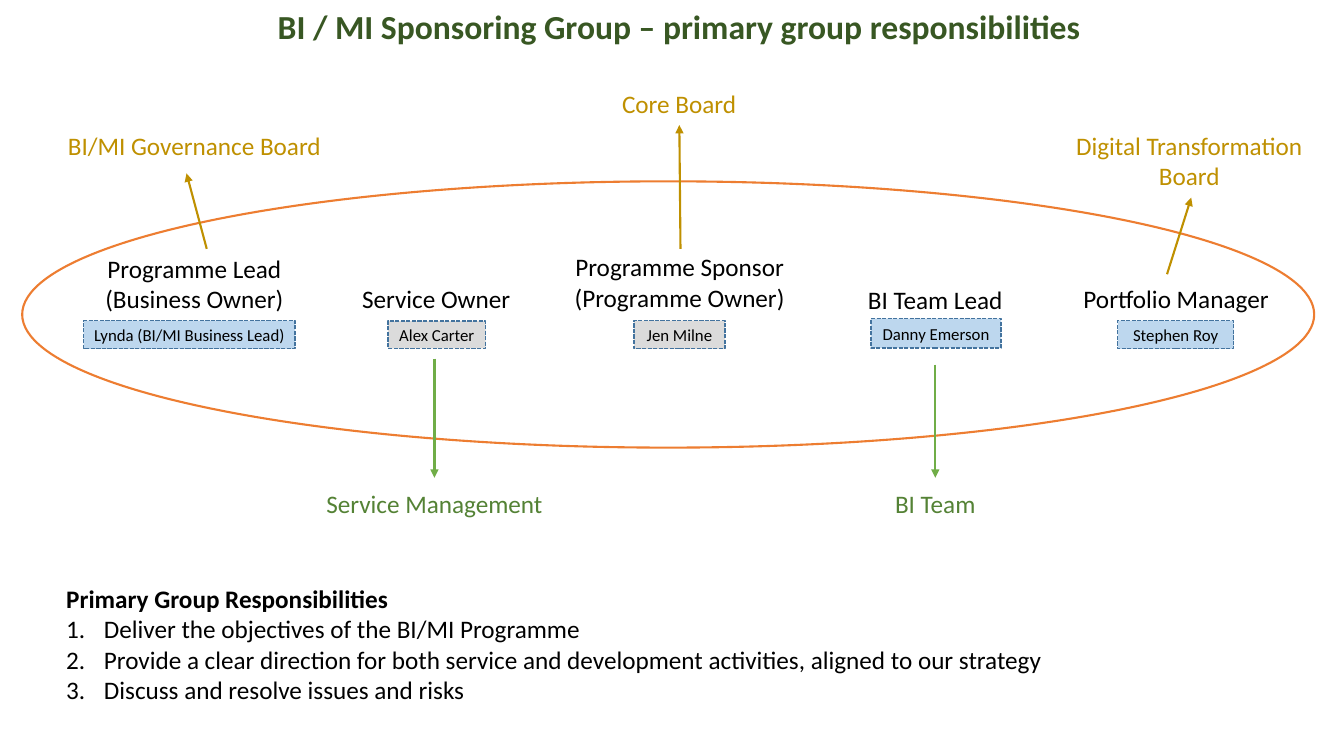
from dataclasses import dataclass

from lxml.etree import SubElement
from pptx import Presentation
from pptx.dml.color import RGBColor
from pptx.enum.dml import MSO_LINE_DASH_STYLE as Dash
from pptx.enum.shapes import MSO_CONNECTOR as Connector, MSO_SHAPE as Shape
from pptx.enum.text import MSO_ANCHOR as Anchor, MSO_AUTO_SIZE as AutoSize, PP_ALIGN as Align
from pptx.oxml.ns import qn
from pptx.slide import Slide
from pptx.text.text import TextFrame, _Paragraph as Paragraph
from pptx.util import Cm, Pt

BLACK = RGBColor(0x00, 0x00, 0x00)
DARK_GREEN = RGBColor(0x38, 0x57, 0x23)
GREEN = RGBColor(0x54, 0x82, 0x35)
LIGHT_GREEN = RGBColor(0x70, 0xAD, 0x47)
GOLD = RGBColor(0xBF, 0x90, 0x00)
ORANGE = RGBColor(0xED, 0x7D, 0x31)
BLUE_LINE = RGBColor(0x43, 0x73, 0x9E)
PALE_BLUE = RGBColor(0xBD, 0xD7, 0xEE)
PALE_GREY = RGBColor(0xDB, 0xDB, 0xDB)

FONT = "Calibri"
LINE_HEIGHT = 0.78
BOX_MARGINS = 0.24


@dataclass(frozen=True)
class Label:
    lines: tuple[str, ...]
    left: float
    top: float
    width: float
    colour: RGBColor = BLACK


@dataclass(frozen=True)
class NameTag:
    name: str
    left: float
    top: float
    width: float
    height: float
    fill: RGBColor


@dataclass(frozen=True)
class Arrow:
    start: tuple[float, float]
    end: tuple[float, float]
    colour: RGBColor


ROLES = (
    Label(("Programme Lead", "(Business Owner)"), 1.09, 6.25, 7.62),
    Label(("Service Owner",), 8.33, 7.01, 5.33),
    Label(("Programme Sponsor", "(Programme Owner)"), 13.03, 6.22, 8.2),
    Label(("BI Team Lead",), 19.76, 7.04, 7.62),
    Label(("Portfolio Manager",), 25.83, 7.01, 7.62),
)
GROUPS = (
    Label(("BI/MI Governance Board",), 1.09, 3.15, 7.62, GOLD),
    Label(("Core Board",), 12.9, 2.11, 8.43, GOLD),
    Label(("Digital Transformation", "Board"), 26.82, 3.15, 6.3, GOLD),
    Label(("Service Management",), 7.8, 12.19, 6.3, GREEN),
    Label(("BI Team",), 20.42, 12.19, 6.3, GREEN),
)
NAME_TAGS = (
    NameTag("Lynda (BI/MI Business Lead)", 2.11, 8.08, 5.33, 0.71, PALE_BLUE),
    NameTag("Alex Carter", 9.78, 8.09, 2.46, 0.69, PALE_GREY),
    NameTag("Jen Milne", 15.98, 8.08, 2.29, 0.71, PALE_GREY),
    NameTag("Danny Emerson", 21.95, 8.03, 3.28, 0.74, PALE_BLUE),
    NameTag("Stephen Roy", 28.17, 8.08, 2.92, 0.71, PALE_BLUE),
)
ARROWS = (
    Arrow((5.21, 6.27), (4.7, 4.37), GOLD),
    Arrow((17.15, 6.27), (17.12, 3.15), GOLD),
    Arrow((29.41, 6.91), (30.02, 4.98), GOLD),
    Arrow((10.95, 9.04), (10.95, 12.04), LIGHT_GREEN),
    Arrow((23.57, 9.19), (23.57, 12.04), LIGHT_GREEN),
)
RESPONSIBILITIES = (
    "Deliver the objectives of the BI/MI Programme",
    "Provide a clear direction for both service and development activities, aligned to our strategy",
    "Discuss and resolve issues and risks",
)


def add_run(p: Paragraph, text: str, size: float, colour: RGBColor, bold: bool = False) -> None:
    r = p.add_run()
    r.text = text
    r.font.name = FONT
    r.font.size = Pt(size)
    r.font.bold = bold
    r.font.color.rgb = colour


def add_text_box(s: Slide, left: float, top: float, width: float, line_count: int) -> TextFrame:
    height = line_count * LINE_HEIGHT + BOX_MARGINS
    tf = s.shapes.add_textbox(Cm(left), Cm(top), Cm(width), Cm(height)).text_frame
    tf.word_wrap = True
    tf.auto_size = AutoSize.SHAPE_TO_FIT_TEXT
    return tf


def add_title(s: Slide) -> None:
    title = s.shapes.title
    title.left, title.top, title.width, title.height = Cm(0.53), Cm(0.13), Cm(33.17), Cm(1.17)
    tf = title.text_frame
    tf.auto_size = AutoSize.NONE
    tf.vertical_anchor = Anchor.MIDDLE
    p = tf.paragraphs[0]
    p.alignment = Align.CENTER
    p.line_spacing = 0.9
    add_run(p, "BI / MI Sponsoring Group – primary group responsibilities", 24, DARK_GREEN, True)


def add_group_ellipse(s: Slide) -> None:
    ellipse = s.shapes.add_shape(Shape.OVAL, Cm(0.56), Cm(4.57), Cm(32.56), Cm(6.71))
    ellipse.shadow.inherit = False
    ellipse.fill.background()
    ellipse.line.color.rgb = ORANGE
    ellipse.line.width = Pt(1.5)


def add_label(s: Slide, label: Label) -> None:
    tf = add_text_box(s, label.left, label.top, label.width, len(label.lines))
    for i, line in enumerate(label.lines):
        p = tf.add_paragraph() if i else tf.paragraphs[0]
        p.alignment = Align.CENTER
        add_run(p, line, 18, label.colour)


def add_name_tag(s: Slide, tag: NameTag) -> None:
    sp = s.shapes.add_shape(Shape.RECTANGLE, Cm(tag.left), Cm(tag.top), Cm(tag.width), Cm(tag.height))
    sp.shadow.inherit = False
    sp.fill.solid()
    sp.fill.fore_color.rgb = tag.fill
    sp.line.color.rgb = BLUE_LINE
    sp.line.width = Pt(1)
    sp.line.dash_style = Dash.SQUARE_DOT
    tf = sp.text_frame
    tf.word_wrap = False
    tf.vertical_anchor = Anchor.MIDDLE
    p = tf.paragraphs[0]
    p.alignment = Align.CENTER
    add_run(p, tag.name, 12, BLACK)


def add_arrow(s: Slide, arrow: Arrow) -> None:
    (x1, y1), (x2, y2) = arrow.start, arrow.end
    line = s.shapes.add_connector(Connector.STRAIGHT, Cm(x1), Cm(y1), Cm(x2), Cm(y2))
    line.line.color.rgb = arrow.colour
    line.line.width = Pt(1.5)
    SubElement(line.line._get_or_add_ln(), qn("a:tailEnd"), type="triangle")
    SubElement(line._element.spPr, qn("a:effectLst"))


def add_responsibilities(s: Slide) -> None:
    tf = add_text_box(s, 1.42, 14.58, 30.05, 1 + len(RESPONSIBILITIES))
    add_run(tf.paragraphs[0], "Primary Group Responsibilities", 18, BLACK, True)
    indent = Cm(0.95)
    for text in RESPONSIBILITIES:
        p = tf.add_paragraph()
        add_run(p, text, 18, BLACK)
        pPr = p._p.get_or_add_pPr()
        pPr.set("marL", str(indent))
        pPr.set("indent", str(-indent))
        SubElement(pPr, qn("a:buFont"), typeface="+mj-lt")
        SubElement(pPr, qn("a:buAutoNum"), type="arabicPeriod")


def main() -> None:
    prs = Presentation()
    prs.slide_width, prs.slide_height = Cm(33.87), Cm(19.05)
    s = prs.slides.add_slide(prs.slide_layouts.get_by_name("Title Only"))
    add_title(s)
    add_group_ellipse(s)
    for label in ROLES + GROUPS:
        add_label(s, label)
    for tag in NAME_TAGS:
        add_name_tag(s, tag)
    for arrow in ARROWS:
        add_arrow(s, arrow)
    add_responsibilities(s)
    prs.save("out.pptx")


if __name__ == "__main__":
    main()
